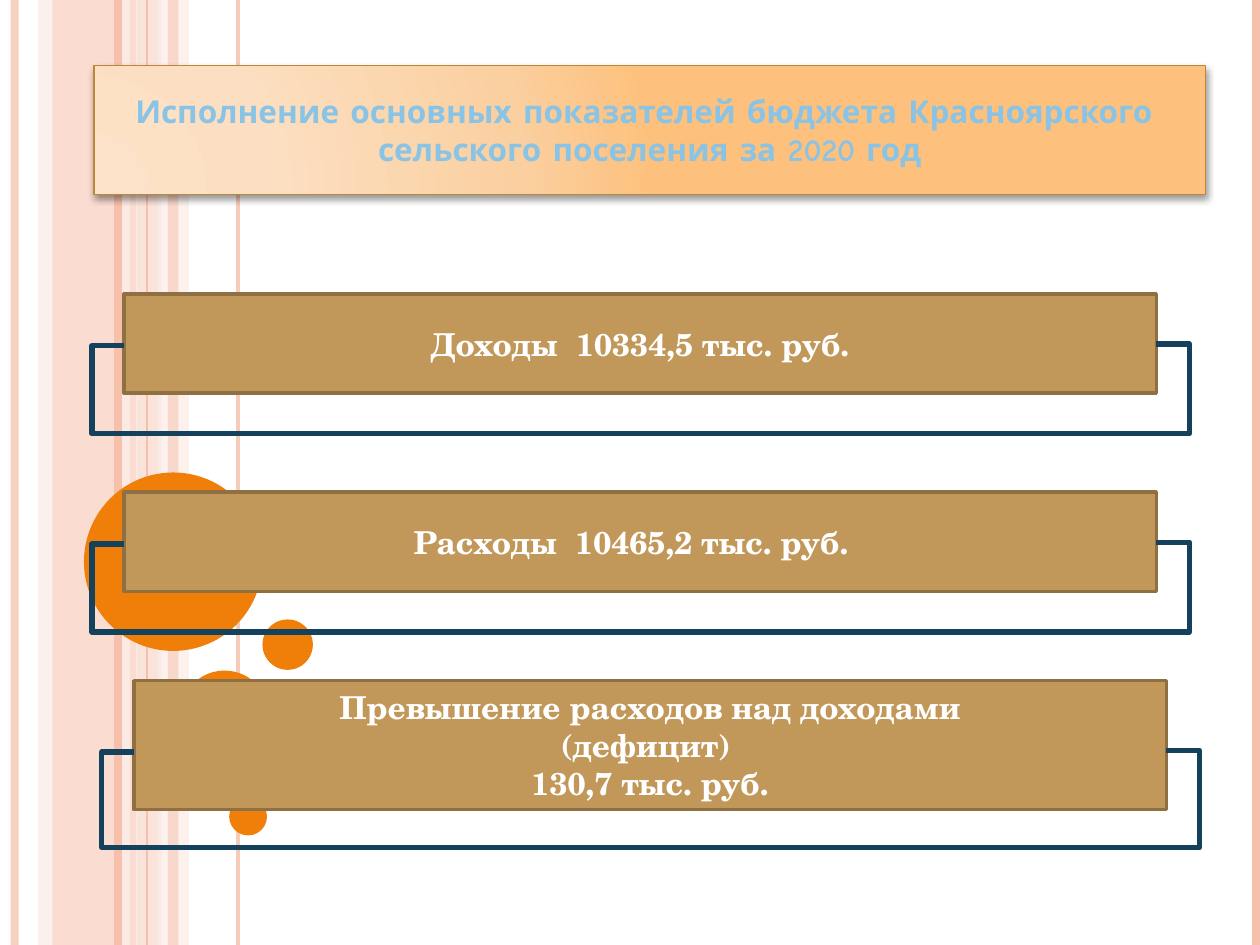
from lxml import etree
from pptx import Presentation
from pptx import util as u
from pptx.dml import color as dml
from pptx.enum import shapes, text
from pptx.oxml import ns

SALMON, BLUSH, PALE = "F6C0AB", "F9D8CC", "FCECE7"
ORANGE, BRONZE, UMBER, NAVY = "F07F09", "C19859", "8F7042", "14425D"
HEIGHT = 540


def rgb(value):
    return dml.RGBColor.from_string(value)


def child(parent, tag, **values):
    attributes = {name: str(value) for name, value in values.items()}
    return etree.SubElement(parent, ns.qn(tag), attributes)


class Painter:
    """Holds the style and the current slide and draws each kind of element."""

    body = {"name": "TeX Gyre Schola", "size": u.Pt(18), "bold": True}
    heading = {"name": "Comic Neue", "size": u.Pt(18), "bold": True}
    frame = {"word_wrap": True, "vertical_anchor": text.MSO_ANCHOR.MIDDLE}

    def __init__(self, slide):
        self.items = slide.shapes

    def apply(self, target, values):
        for name, value in values.items():
            setattr(target, name, value)

    def fade(self, element, opacity):
        if opacity < 100:
            tint = next(element.iter(ns.qn("a:srgbClr")))
            child(tint, "a:alpha", val=opacity * 1000)

    def shape(self, kind, area, fill, opacity=100, line=None, width=0):
        item = self.items.add_shape(kind, *map(u.Pt, area))
        item.shadow.inherit = False
        item.fill.solid()
        item.fill.fore_color.rgb = rgb(fill)
        self.fade(item._element.spPr, opacity)
        if line:
            item.line.color.rgb = rgb(line)
            item.line.width = u.Pt(width)
        else:
            item.line.fill.background()
        return item

    def band(self, left, width, fill, opacity):
        self.shape(shapes.MSO_SHAPE.RECTANGLE, (left, 0, width, HEIGHT), fill, opacity)

    def circle(self, left, top, size):
        self.shape(shapes.MSO_SHAPE.OVAL, (left, top, size, size), ORANGE)

    def box(self, area, lines, fill, line, width, font, ink):
        item = self.shape(shapes.MSO_SHAPE.RECTANGLE, area, fill, line=line, width=width)
        self.apply(item.text_frame, self.frame)
        for index, words in enumerate(lines):
            paras = item.text_frame
            para = paras.add_paragraph() if index else paras.paragraphs[0]
            para.alignment = text.PP_ALIGN.CENTER
            span = para.add_run()
            span.text = words
            self.apply(span.font, font)
            span.font.color.rgb = rgb(ink)
        return item

    def connector(self, kind, ends, color, width, opacity=100):
        item = self.items.add_connector(kind, *map(u.Pt, ends))
        item.line.color.rgb = rgb(color)
        item.line.width = u.Pt(width)
        properties = item._element.spPr
        self.fade(properties, opacity)
        child(properties, "a:effectLst")
        return item

    def stripe(self, x, color, width, opacity):
        self.connector(shapes.MSO_CONNECTOR.STRAIGHT, (x, 0, x, HEIGHT), color, width, opacity)

    def bracket(self, left, top, width, drop):
        ends = (left + width, top, left, top + 1)
        item = self.connector(shapes.MSO_CONNECTOR.ELBOW, ends, NAVY, 3)
        properties = item._element.spPr
        properties.find(ns.qn("a:xfrm")).set("rot", "10800000")
        geometry = properties.find(ns.qn("a:prstGeom"))
        geometry.set("prst", "bentConnector5")
        for old in list(geometry):
            geometry.remove(old)
        guides = child(geometry, "a:avLst")
        for index, ratio in enumerate((-0.031, -drop, 1.032), 1):
            child(guides, "a:gd", name=f"adj{index}", fmla=f"val {round(ratio * 100000)}")

    def gradient(self, item, stops, target):
        solid = item._element.spPr.find(ns.qn("a:solidFill"))
        blend = etree.Element(ns.qn("a:gradFill"), {"rotWithShape": "1"})
        entries = child(blend, "a:gsLst")
        for position, color in stops:
            child(child(entries, "a:gs", pos=position * 1000), "a:srgbClr", val=color)
        sides = {side: percent * 1000 for side, percent in zip("ltrb", target)}
        child(child(blend, "a:path", path="circle"), "a:fillToRect", **sides)
        solid.getparent().replace(solid, blend)

    def drop_shadow(self, item, blur, distance, opacity):
        effects = item._element.spPr.find(ns.qn("a:effectLst"))
        shadow = child(effects, "a:outerShdw", blurRad=u.Pt(blur), dist=u.Pt(distance),
                       dir=5400000, rotWithShape=0)
        child(shadow, "a:srgbClr", val="000000")
        self.fade(shadow, opacity)


def main():
    deck = Presentation()
    deck.slide_width, deck.slide_height = u.Pt(720), u.Pt(HEIGHT)
    painter = Painter(deck.slides.add_slide(deck.slide_layouts[6]))

    for band in ((30, 48, SALMON, 54), (21.75, 8.25, BLUSH, 36),
                 (78, 14.25, BLUSH, 70), (90, 18, PALE, 71)):
        painter.band(*band)
    for stripe in ((8.4, SALMON, 4.5, 73), (72, PALE, 4.5, 83), (67.2, SALMON, 4.5, 100),
                   (136, SALMON, 2.25, 82), (84, SALMON, 0.75, 100), (717.6, SALMON, 4.5, 100)):
        painter.stripe(*stripe)
    painter.band(96, 6, SALMON, 51)
    for circle in ((48, 270, 102), (103.1, 383.2, 50.5), (131, 455.8, 21.6), (150, 354, 28.8)):
        painter.circle(*circle)

    title = painter.box(
        (53.8, 37.5, 635.2, 73.7),
        ("Исполнение основных показателей бюджета Красноярского ",
         "сельского поселения за 2020 год"),
        "FDC17D", "BC8736", 1, painter.heading, "89C3E5")
    painter.gradient(title, ((0, "FCE2C8"), (30, "FCDFC2"), (75, "FBD0A1"), (100, "FDC17D")),
                     (5, 100, 120, 10))
    painter.drop_shadow(title, 4, 2, 40)

    width = 590
    rows = (
        (70.8, 168, 56.7, 196.5, 50.7, ("Доходы  10334,5 тыс. руб.",)),
        (70.8, 281.3, 56.7, 309.8, 50.7, ("Расходы  10465,2 тыс. руб.  ",)),
        (76.5, 389, 73.7, 428.7, 55.1,
         ("Превышение расходов над доходами", "(дефицит) ", "130,7 тыс. руб.")),
    )
    for left, top, height, joint, drop, lines in rows:
        painter.box((left, top, width, height), lines, BRONZE, UMBER, 2, painter.body, "FFFFFF")
        painter.bracket(left, joint, width, drop)

    deck.save("out.pptx")


if __name__ == "__main__":
    main()
